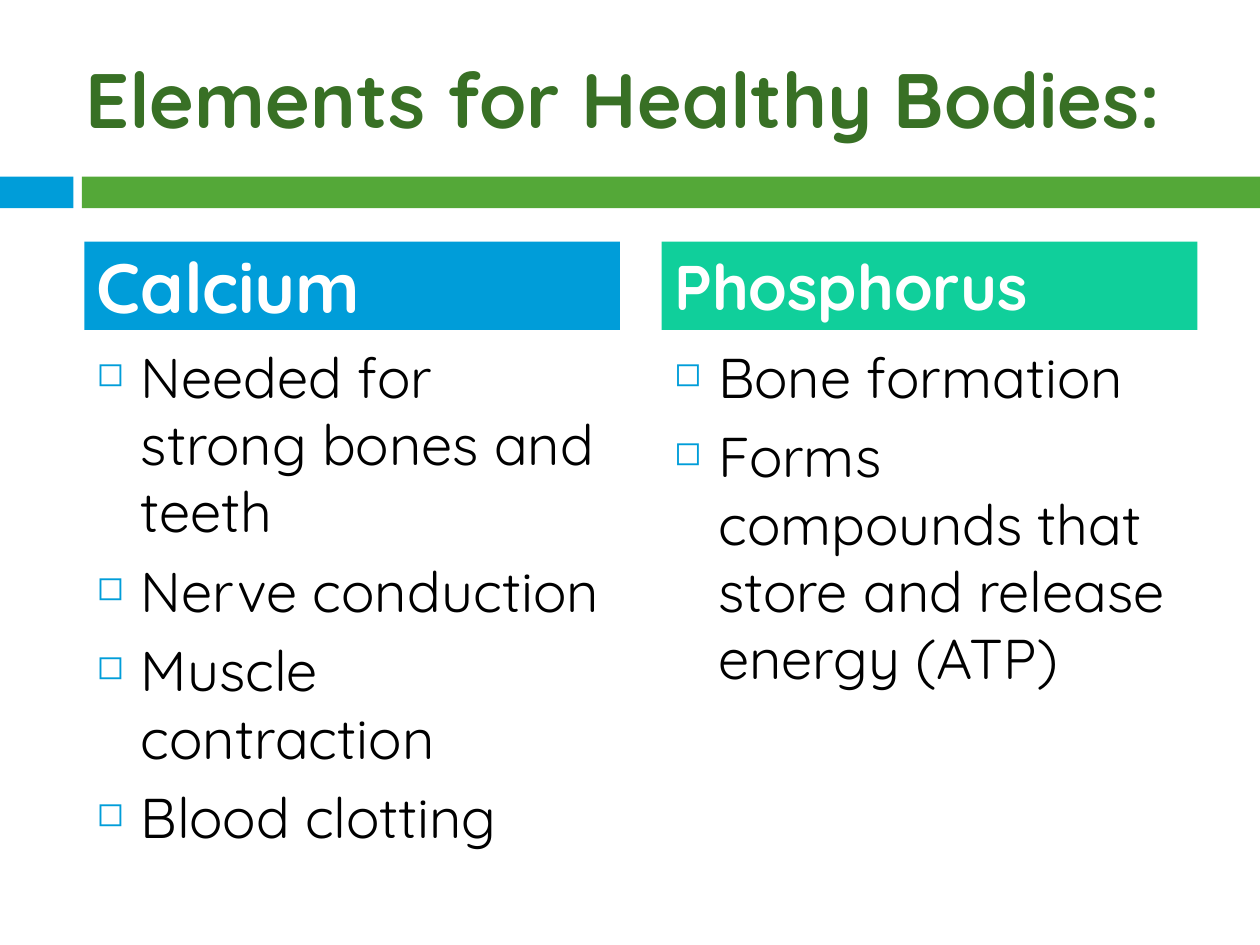
from lxml.etree import SubElement
from pptx import Presentation
from pptx.dml.color import RGBColor
from pptx.enum.shapes import MSO_SHAPE
from pptx.enum.text import MSO_ANCHOR, PP_ALIGN
from pptx.oxml.ns import qn
from pptx.util import Cm, Pt

BLUE = RGBColor(0x00, 0x9D, 0xD9)
GREEN = RGBColor(0x54, 0xA8, 0x38)
DARK_GREEN = RGBColor(0x38, 0x70, 0x25)
TEAL = RGBColor(0x10, 0xCF, 0x9B)
WHITE = RGBColor(0xFF, 0xFF, 0xFF)
BLACK = RGBColor(0x00, 0x00, 0x00)
FONT = "Quicksand"

TITLE = "Elements for Healthy Bodies:"
COLUMNS = [
    ("Calcium", 40, BLUE, [
        "Needed for strong bones and teeth",
        "Nerve conduction",
        "Muscle contraction",
        "Blood clotting",
    ]),
    ("Phosphorus", 36, TEAL, [
        "Bone formation",
        "Forms compounds that store and release energy (ATP)",
    ]),
]

SLIDE_WIDTH, SLIDE_HEIGHT = Cm(25.4), Cm(19.05)
BAND_TOP, BAND_HEIGHT = Cm(3.56), Cm(0.64)
BAND_SPLIT, BAND_GAP = Cm(1.48), Cm(0.17)
COLUMN_LEFT, COLUMN_WIDTH, COLUMN_STEP = Cm(1.7), Cm(10.8), Cm(11.64)
HEADING_TOP, HEADING_HEIGHT = Cm(4.87), Cm(1.78)
LIST_TOP, LIST_HEIGHT = Cm(6.78), Cm(9.96)
BULLET_INDENT = Cm(0.89)


def add_bar(slide, left, top, width, height, color):
    shape = slide.shapes.add_shape(MSO_SHAPE.RECTANGLE, left, top, width, height)
    shape.shadow.inherit = False
    shape.fill.solid()
    shape.fill.fore_color.rgb = color
    shape.line.fill.background()
    return shape


def write(paragraph, text, size, color, bold=False):
    paragraph.alignment = PP_ALIGN.LEFT
    run = paragraph.add_run()
    run.text = text
    run.font.name = FONT
    run.font.size = Pt(size)
    run.font.bold = bold
    run.font.color.rgb = color


def prepare_frame(shape, anchor):
    frame = shape.text_frame
    frame.word_wrap = True
    frame.vertical_anchor = anchor
    return frame


def add_bullet(paragraph):
    properties = paragraph._p.get_or_add_pPr()
    properties.set("marL", str(BULLET_INDENT))
    properties.set("indent", str(-BULLET_INDENT))
    bullet_color = SubElement(properties, qn("a:buClr"))
    SubElement(bullet_color, qn("a:srgbClr"), val=str(BLUE))
    SubElement(properties, qn("a:buSzPct"), val="60000")
    SubElement(properties, qn("a:buChar"), char="◻")


def add_list(slide, left, items):
    box = slide.shapes.add_textbox(left, LIST_TOP, COLUMN_WIDTH, LIST_HEIGHT)
    frame = prepare_frame(box, MSO_ANCHOR.TOP)
    for index, item in enumerate(items):
        paragraph = frame.add_paragraph() if index else frame.paragraphs[0]
        paragraph.space_before = Pt(7 if index else 0)
        write(paragraph, item, 32, BLACK)
        add_bullet(paragraph)


def main():
    presentation = Presentation()
    presentation.slide_width = SLIDE_WIDTH
    presentation.slide_height = SLIDE_HEIGHT
    slide = presentation.slides.add_slide(presentation.slide_layouts[6])

    band_left = BAND_SPLIT + BAND_GAP
    add_bar(slide, 0, BAND_TOP, BAND_SPLIT, BAND_HEIGHT, BLUE)
    add_bar(slide, band_left, BAND_TOP, SLIDE_WIDTH - band_left, BAND_HEIGHT, GREEN)

    title = slide.shapes.add_textbox(BAND_SPLIT, Cm(0.76), Cm(22.66), Cm(2.41))
    frame = prepare_frame(title, MSO_ANCHOR.MIDDLE)
    write(frame.paragraphs[0], TITLE, 44, DARK_GREEN, bold=True)

    for index, (heading, size, color, items) in enumerate(COLUMNS):
        left = COLUMN_LEFT + index * COLUMN_STEP
        add_list(slide, left, items)
        bar = add_bar(slide, left, HEADING_TOP, COLUMN_WIDTH, HEADING_HEIGHT, color)
        frame = prepare_frame(bar, MSO_ANCHOR.MIDDLE)
        write(frame.paragraphs[0], heading, size, WHITE, bold=True)

    presentation.save("out.pptx")


if __name__ == "__main__":
    main()
